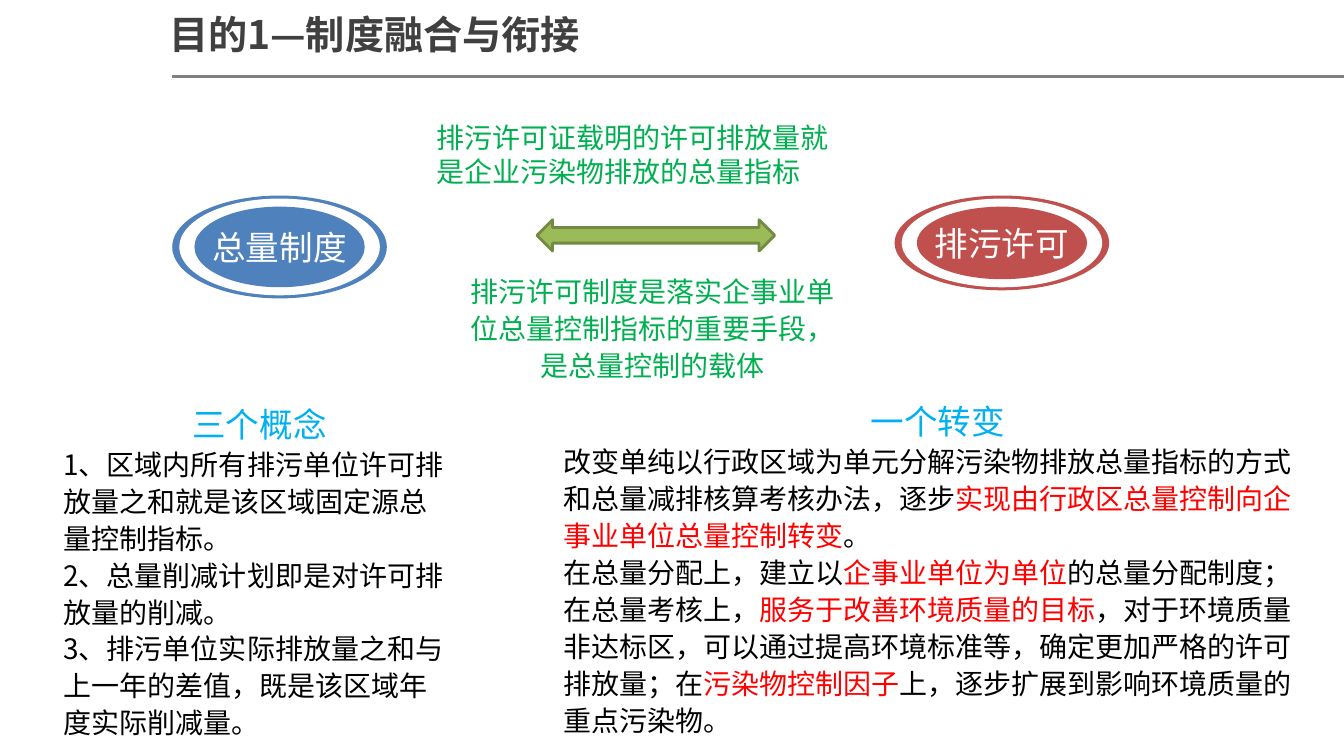
from dataclasses import dataclass

from lxml import etree
from pptx import Presentation
from pptx import util as u
from pptx.dml.color import RGBColor
from pptx.enum import shapes, text
from pptx.oxml.ns import qn

COLORS = {
    "white": "FFFFFF", "black": "000000", "title": "404040", "rule": "808080",
    "heading": "00B0F0", "emphasis": "FF0000", "note": "00B050",
    "quota": "4F81BD", "permit": "C0504D",
    "arrow": "9BBB59", "arrow_edge": "738A42",
}
CJK_FONT = "Noto Sans CJK SC"


@dataclass
class Para:
    """Text pieces; every second piece is emphasised."""
    pieces: tuple[str, ...]
    size: int = 20
    color: str = "black"
    centered: bool = False
    spacing: float | None = 1.1
    bold: bool = False
    font: str = CJK_FONT


@dataclass
class Block:
    left: float
    top: float
    width: float
    height: float
    paras: list[Para]
    middle: bool = True


@dataclass
class Badge:
    label: str
    left: float
    top: float
    height: float
    color: str
    width: float = 2.13


BLOCKS = [
    Block(1.58, 0.05, 6.35, 0.57, [
        Para(("目的1—制度融合与衔接",), 28, "title", spacing=None, bold=True)], middle=False),
    Block(5.49, 3.75, 7.64, 3.75, [
        Para(("一个转变",), 24, "heading", centered=True),
        Para(("改变单纯以行政区域为单元分解污染物排放总量指标的方式和总量减排核算考核办法，逐步",
              "实现由行政区总量控制向企事业单位总量控制转变", "。")),
        Para(("在总量分配上，建立以", "企事业单位为单位",
              "的总量分配制度；在总量考核上，", "服务于改善环境质量的目标",
              "，对于环境质量非达标区，可以通过提高环境标准等，确定更加严格的许可排放量；在",
              "污染物控制因子", "上，逐步扩展到影响环境质量的重点污染物。"))]),
    Block(0.53, 3.8, 4.09, 3.7, [
        Para(("三个概念",), 24, "heading", centered=True),
        Para(("1、区域内所有排污单位许可排放量之和就是该区域固定源总量控制指标。",)),
        Para(("2、总量削减计划即是对许可排放量的削减。",)),
        Para(("3、排污单位实际排放量之和与上一年的差值，既是该区域年度实际削减量。",))]),
    Block(4.47, 2.57, 4.02, 1.34, [
        Para(("排污许可制度是落实企事业单位总量控制指标的重要手段，是总量控制的载体",),
             color="note", centered=True)]),
    Block(4.23, 1.15, 4.17, 0.77, [
        Para(("排污许可证载明的许可排放量就是企业污染物排放的总量指标",),
             color="note", spacing=None)], middle=False),
]
BADGES = [
    Badge("总量制度", 1.71, 1.94, 1.02, "quota"),
    Badge("排污许可", 8.88, 1.94, 0.94, "permit"),
]


def rgb(name: str) -> RGBColor:
    return RGBColor.from_string(COLORS[name])


def write(frame, paras: list[Para]) -> None:
    for index, para in enumerate(paras):
        line = frame.paragraphs[0] if index == 0 else frame.add_paragraph()
        line.alignment = text.PP_ALIGN.CENTER if para.centered else text.PP_ALIGN.LEFT
        if para.spacing:
            line.line_spacing = para.spacing
        font = line.font
        font.name, font.size, font.bold = para.font, u.Pt(para.size), para.bold
        font.color.rgb = rgb(para.color)
        defaults = line._p.pPr.find(qn("a:defRPr"))
        etree.SubElement(defaults, qn("a:ea"), typeface=CJK_FONT)
        for position, piece in enumerate(para.pieces):
            run = line.add_run()
            run.text = piece
            if position % 2:
                run.font.color.rgb = rgb("emphasis")


def add_block(slide, block: Block) -> None:
    box = slide.shapes.add_textbox(*map(u.Inches, (block.left, block.top, block.width, block.height)))
    frame = box.text_frame
    frame.word_wrap = True
    frame.vertical_anchor = text.MSO_ANCHOR.MIDDLE if block.middle else text.MSO_ANCHOR.TOP
    write(frame, block.paras)


def add_filled(slide, kind, left: float, top: float, width: float, height: float, color: str):
    shape = slide.shapes.add_shape(kind, *map(u.Inches, (left, top, width, height)))
    shape.shadow.inherit = False
    shape.fill.solid()
    shape.fill.fore_color.rgb = rgb(color)
    shape.line.fill.background()
    return shape


def add_badge(slide, badge: Badge) -> None:
    """Draw a coloured oval inside a white gap and a thin coloured ring."""
    rings = ((0, 0, badge.color), (0.07, 0.03, "white"), (0.22, 0.11, badge.color))
    for dx, dy, color in rings:
        oval = add_filled(slide, shapes.MSO_SHAPE.OVAL, badge.left + dx, badge.top + dy,
                          badge.width - 2 * dx, badge.height - 2 * dy, color)
    frame = oval.text_frame
    frame.word_wrap = False
    frame.vertical_anchor = text.MSO_ANCHOR.MIDDLE
    write(frame, [Para((badge.label,), 24, "white", centered=True, spacing=None, font="Arial")])


def add_title_rule(slide) -> None:
    rule = slide.shapes.add_connector(
        shapes.MSO_CONNECTOR.STRAIGHT, *map(u.Inches, (1.71, 0.76, 13.34, 0.76)))
    rule.line.color.rgb = rgb("rule")
    rule.line.width = u.Pt(2)
    etree.SubElement(rule._element.spPr, qn("a:effectLst"))


def add_link_arrow(slide) -> None:
    arrow = add_filled(slide, shapes.MSO_SHAPE.LEFT_RIGHT_ARROW, 5.33, 2.18, 2.36, 0.31, "arrow")
    arrow.line.color.rgb = rgb("arrow_edge")
    arrow.line.width = u.Pt(2)


def main() -> None:
    deck = Presentation()
    deck.slide_width, deck.slide_height = u.Inches(13.34), u.Inches(7.5)
    slide = deck.slides.add_slide(deck.slide_layouts[6])
    add_title_rule(slide)
    for block in BLOCKS:
        add_block(slide, block)
    for badge in BADGES:
        add_badge(slide, badge)
    add_link_arrow(slide)
    deck.save("out.pptx")


if __name__ == "__main__":
    main()
